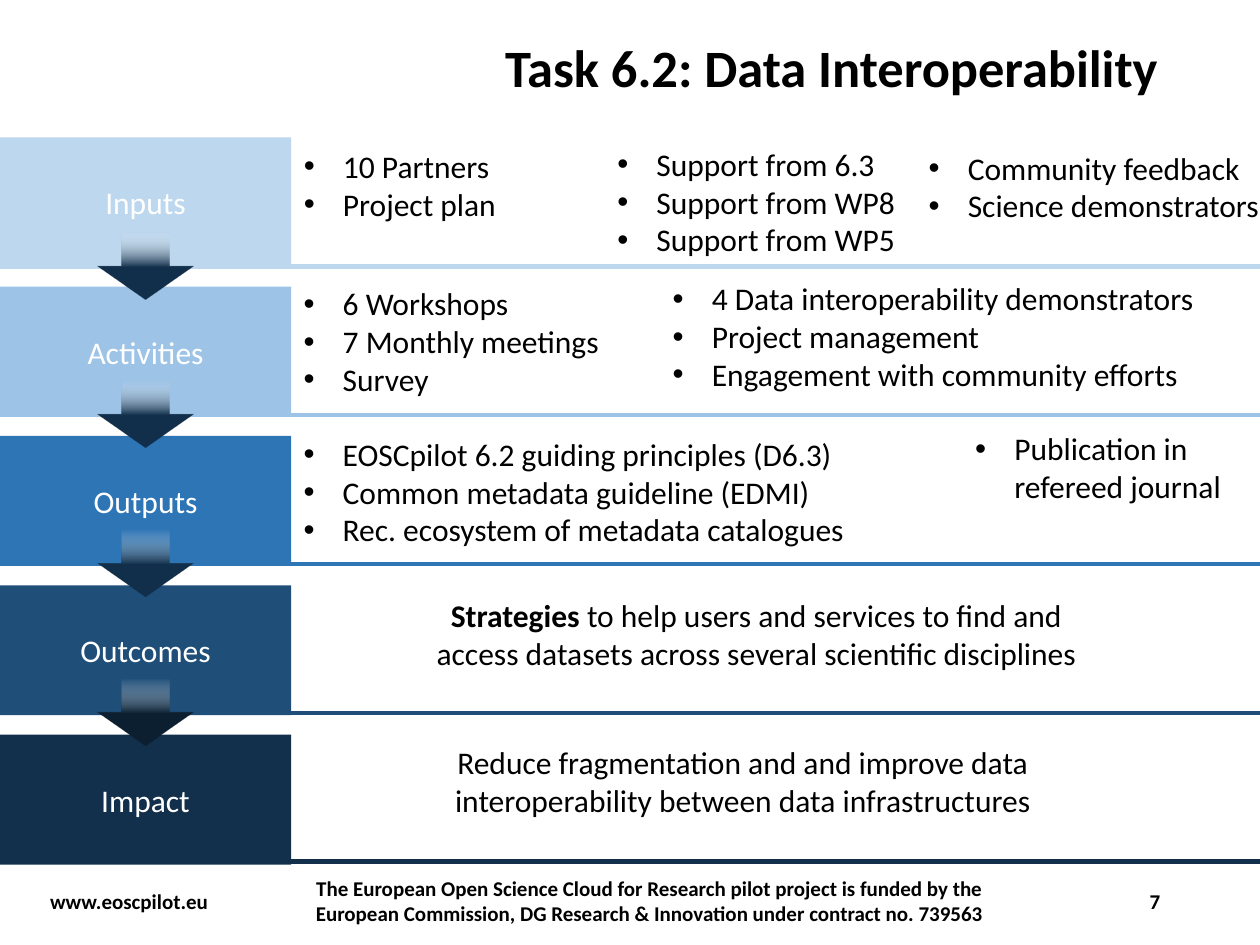
import pptx
import pptx.util
import pptx.dml.color
import pptx.enum.shapes
import pptx.enum.text
import pptx.oxml.ns
from dataclasses import dataclass
from lxml import etree

Cm, Pt = pptx.util.Cm, pptx.util.Pt
Shape = pptx.enum.shapes.MSO_SHAPE
Align, Anchor = pptx.enum.text.PP_ALIGN, pptx.enum.text.MSO_ANCHOR
Fit = pptx.enum.text.MSO_AUTO_SIZE
qn = pptx.oxml.ns.qn


@dataclass(frozen=True)
class Theme:
    font: str = "Calibri"
    dark: str = "000000"
    light: str = "FFFFFF"
    head: int = 30
    body: int = 18
    foot: int = 12
    line: float = 2.5
    fade: tuple = ("F7FAFD", "12304B")
    fade_end: tuple = ("FFFFFF", "0C2032")


@dataclass(frozen=True)
class Stage:
    name: str
    color: str


@dataclass(frozen=True)
class Note:
    """A block of text; box is left, top, width, height in cm."""
    box: tuple
    lines: tuple
    lead: str = ""
    wrap: bool = False


THEME = Theme()
WIDE, HIGH = 25.4, 19.05
STEP = 3.0  # from one stage to the next

STAGES = (
    Stage("Inputs", "BDD7EE"),
    Stage("Activities", "9DC3E6"),
    Stage("Outputs", "2E75B6"),
    Stage("Outcomes", "1F4E79"),
    Stage("Impact", "12304B"),
)

LISTS = (
    Note((5.87, 2.84, 4.39, 1.8), ("10 Partners", "Project plan")),
    Note((12.19, 2.79, 6.17, 2.57),
         ("Support from 6.3", "Support from WP8", "Support from WP5")),
    Note((18.47, 2.87, 7.21, 1.8),
         ("Community feedback", "Science demonstrators")),
    Note((5.87, 5.61, 6.53, 2.57),
         ("6 Workshops", "7 Monthly meetings", "Survey")),
    Note((13.31, 5.51, 11.61, 2.57),
         ("4 Data interoperability demonstrators", "Project management",
          "Engagement with community efforts")),
    Note((5.87, 8.64, 11.94, 2.57),
         ("EOSCpilot 6.2 guiding principles (D6.3)",
          "Common metadata guideline (EDMI)",
          "Rec. ecosystem of metadata catalogues")),
    Note((19.41, 8.53, 5.51, 1.8),
         ("Publication in refereed journal",), wrap=True),
)

GOALS = (
    Note((8.38, 11.89, 13.74, 1.8),
         ("to help users and services to find and access datasets "
          "across several scientific disciplines",), lead="Strategies "),
    Note((8.89, 14.86, 12.17, 1.8),
         ("Reduce fragmentation and and improve data interoperability "
          "between data infrastructures",)),
)

FOOTS = (
    (Note((0.76, 17.65, 3.76, 1.02), ("www.eoscpilot.eu",)), Align.LEFT),
    (Note((6.02, 17.65, 14.15, 1.02),
          ("The European Open Science Cloud for Research pilot project is "
           "funded by the European Commission, DG Research & Innovation "
           "under contract no. 739563",)), Align.CENTER),
    (Note((22.12, 17.65, 1.52, 1.02), ("7",)), Align.RIGHT),
)


def rgb(code: str) -> pptx.dml.color.RGBColor:
    return pptx.dml.color.RGBColor.from_string(code)


def place(shape, box: tuple) -> None:
    shape.left, shape.top, shape.width, shape.height = map(Cm, box)


def add_dot(para) -> None:
    props = para._p.get_or_add_pPr()
    props.set("marL", str(Cm(0.79)))
    props.set("indent", str(-Cm(0.79)))
    etree.SubElement(props, qn("a:buFont"), typeface="Arial")
    etree.SubElement(props, qn("a:buChar"), char="•")


def write(shape, lines: tuple, *, size: float = THEME.body,
          color: str = THEME.dark, bold: bool = False, align=Align.LEFT,
          anchor=Anchor.TOP, wrap: bool = True, fit=Fit.NONE,
          dots: bool = False, lead: str = "", space: float = 1.0) -> None:
    frame = shape.text_frame
    frame.word_wrap, frame.auto_size = wrap, fit
    frame.vertical_anchor = anchor
    for num, line in enumerate(lines):
        para = frame.add_paragraph() if num else frame.paragraphs[0]
        para.alignment, para.line_spacing = align, space
        para.space_before = Pt(0)
        if dots:
            add_dot(para)
        for words, heavy in ((lead, True), (line, bold)):
            if words:
                run = para.add_run()
                run.text = words
                font = run.font
                font.name, font.size, font.bold = THEME.font, Pt(size), heavy
                font.color.rgb = rgb(color)


def add_box(slide, box: tuple):
    return slide.shapes.add_textbox(*map(Cm, box))


def add_rule(slide, top: float, color: str) -> None:
    rule = slide.shapes.add_connector(
        pptx.enum.shapes.MSO_CONNECTOR.STRAIGHT, 0, Cm(top), Cm(WIDE), Cm(top))
    rule.line.color.rgb = rgb(color)
    rule.line.width = Pt(THEME.line)
    etree.SubElement(rule._element.spPr, qn("a:effectLst"))


def add_band(slide, top: float, stage: Stage) -> None:
    band = slide.shapes.add_shape(
        Shape.RECTANGLE, 0, Cm(top), Cm(5.87), Cm(2.62))
    band.shadow.inherit = False
    band.fill.solid()
    band.fill.fore_color.rgb = rgb(stage.color)
    band.line.fill.background()
    write(band, (stage.name,), color=THEME.light, align=Align.CENTER,
          anchor=Anchor.MIDDLE)


def add_arrow(slide, top: float, fade: tuple) -> None:
    arrow = slide.shapes.add_shape(
        Shape.DOWN_ARROW, Cm(1.96), Cm(top), Cm(1.93), Cm(1.35))
    arrow.shadow.inherit = False
    arrow.line.fill.background()
    arrow.fill.gradient()
    # Clear at the top, solid from the middle down
    grad = arrow._element.spPr.find(qn("a:gradFill"))
    stops = grad.find(qn("a:gsLst"))
    for old in list(stops):
        stops.remove(old)
    for pos, code in ((0, fade[0]), (52, fade[1]), (100, fade[1])):
        stop = etree.SubElement(stops, qn("a:gs"), pos=str(pos * 1000))
        tint = etree.SubElement(stop, qn("a:srgbClr"), val=code)
        if pos == 0:
            etree.SubElement(tint, qn("a:alpha"), val="0")
    grad.find(qn("a:lin")).set("ang", str(90 * 60000))


def main() -> None:
    deck = pptx.Presentation()
    deck.slide_width, deck.slide_height = Cm(WIDE), Cm(HIGH)
    slide = deck.slides.add_slide(deck.slide_layouts[3])

    # Title
    title = slide.shapes.title
    place(title, (9.93, 0.38, 21.89, 2.08))
    write(title, ("Task 6.2: Data Interoperability",), size=THEME.head,
          bold=True, anchor=Anchor.MIDDLE, space=0.9)

    # Stages: rules, bands, then the arrows between them
    for num, stage in enumerate(STAGES):
        add_rule(slide, 5.37 + num * STEP, stage.color)
    for num, stage in enumerate(STAGES):
        add_band(slide, 2.77 + num * 3.01, stage)
    fades = [THEME.fade] * 3 + [THEME.fade_end]
    for num, fade in enumerate(fades):
        add_arrow(slide, 4.68 + num * STEP, fade)

    # Lists fill the body placeholders first, then text boxes
    slots = iter([slot for slot in slide.placeholders
                  if slot.placeholder_format.idx in (1, 2)])
    for note in LISTS:
        shape = next(slots, None) or add_box(slide, note.box)
        place(shape, note.box)
        write(shape, note.lines, dots=True, wrap=note.wrap,
              fit=Fit.SHAPE_TO_FIT_TEXT)

    # Outcomes and impact
    for note in GOALS:
        write(add_box(slide, note.box), note.lines, lead=note.lead,
              align=Align.CENTER, fit=Fit.SHAPE_TO_FIT_TEXT)

    # Footer
    for note, align in FOOTS:
        write(add_box(slide, note.box), note.lines, size=THEME.foot,
              bold=True, align=align, anchor=Anchor.MIDDLE)

    deck.save("out.pptx")


if __name__ == "__main__":
    main()
